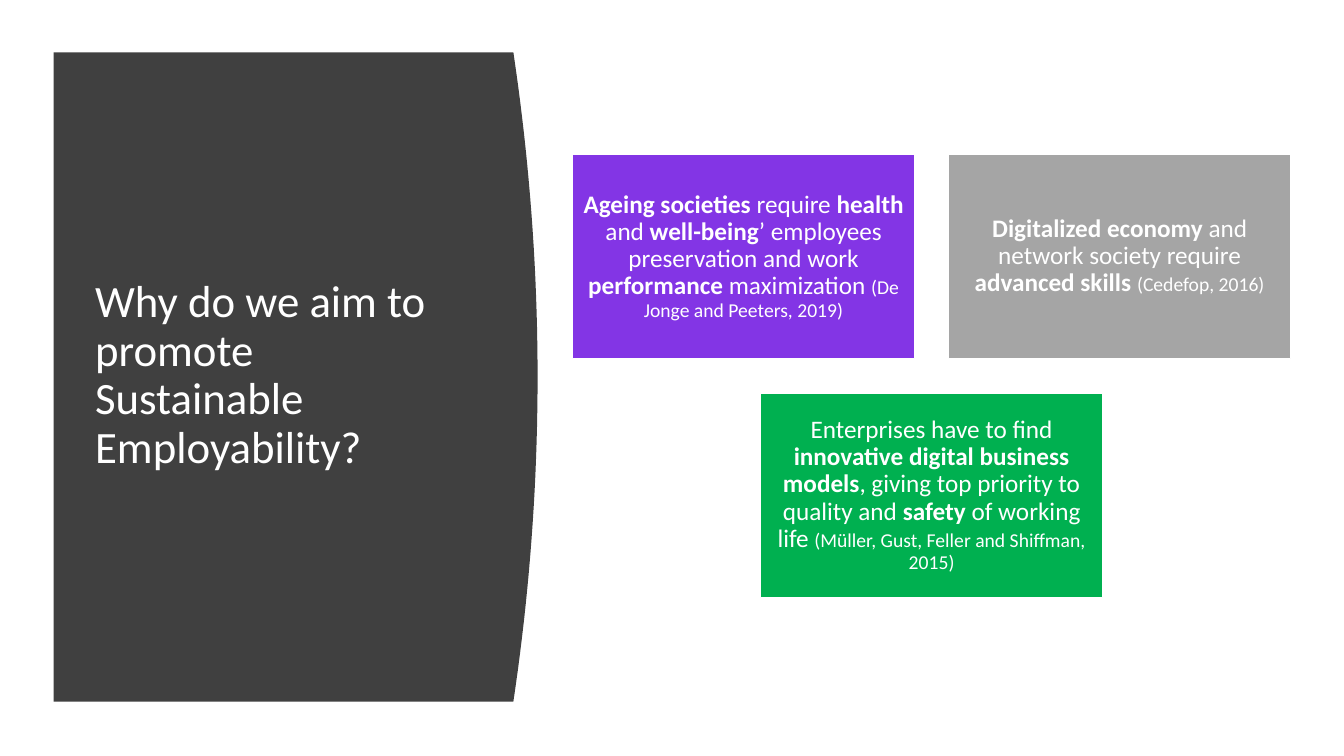
from pptx import Presentation
from pptx.dml.color import RGBColor
from pptx.enum.shapes import MSO_SHAPE as Shape
from pptx.enum.text import MSO_ANCHOR as Anchor, PP_ALIGN as Align
from pptx.util import Inches, Pt

WIDE, HIGH = 13.33, 7.5
WHITE, DARK = "FFFFFF", "404040"
TITLE = "Why do we aim to promote Sustainable Employability?"

# Each card: fill, text with bold parts between asterisks, citation
CARDS = [
    ("8335E5", "*Ageing societies *require *health* and *well-being*’ employees "
     "preservation and work *performance *maximization ",
     "(De Jonge and Peeters, 2019)"),
    ("A5A5A5", "*Digitalized economy *and network society require *advanced skills *",
     "(Cedefop, 2016)"),
    ("00B050", "Enterprises have to find *innovative digital business models*, giving "
     "top priority to quality and *safety* of working life ",
     "(Müller, Gust, Feller and Shiffman, 2015)"),
]


def color(hue):
    return RGBColor.from_string(hue)


def paint(shape, hue):
    shape.shadow.inherit = False
    shape.fill.solid()
    shape.fill.fore_color.rgb = color(hue)


def write(shape, runs, inset, align):
    """Fill a shape with runs of (text, size, bold)."""
    frame = shape.text_frame
    form = {"word_wrap": True, "vertical_anchor": Anchor.MIDDLE}
    form.update({f"margin_{side}": Inches(inset)
                 for side in ("left", "top", "right", "bottom")})
    for key, value in form.items():
        setattr(frame, key, value)
    para = frame.paragraphs[0]
    para.alignment, para.line_spacing = align, 0.9
    for text, size, bold in runs:
        run = para.add_run()
        run.text = text
        for key, value in {"name": "Calibri", "size": Pt(size), "bold": bold}.items():
            setattr(run.font, key, value)
        run.font.color.rgb = color(WHITE)


def panel(slide, left, top, width, height):
    """Dark title panel whose right edge bulges as a parabola."""
    bulge, steps = 0.05 * width, 40
    edge = []
    for step in range(steps + 1):
        part = step / steps
        curve = 1 - (2 * part - 1) ** 2
        edge.append((Inches(left + width - bulge + bulge * curve),
                     Inches(top + height * part)))
    form = slide.shapes.build_freeform(Inches(left), Inches(top), scale=1.0)
    form.add_line_segments(edge + [(Inches(left), Inches(top + height))], close=True)
    back = form.convert_to_shape()
    paint(back, DARK)
    back.line.fill.background()

    # Title
    box = slide.shapes.add_textbox(
        Inches(left + 0.41), Inches(top + 0.59), Inches(0.78 * width), Inches(height - 1.2))
    write(box, [(TITLE, 32, False)], 0, Align.LEFT)


def cards(slide, left, top, width, height):
    """Cards in two columns, with a short last row centred."""
    cols, gap = 2, 0.34
    rows = -(-len(CARDS) // cols)
    wide = (width - gap * (cols - 1)) / cols
    high = (height - gap * (rows - 1)) / rows
    for i, (hue, text, cite) in enumerate(CARDS):
        row, col = divmod(i, cols)
        count = min(cols, len(CARDS) - row * cols)
        shift = (cols - count) * (wide + gap) / 2
        card = slide.shapes.add_shape(
            Shape.RECTANGLE, Inches(left + shift + col * (wide + gap)),
            Inches(top + row * (high + gap)), Inches(wide), Inches(high))
        paint(card, hue)
        card.line.color.rgb = color(WHITE)
        card.line.width = Pt(1)
        runs = [(part, 18, n % 2 == 1) for n, part in enumerate(text.split("*")) if part]
        write(card, runs + [(cite, 14, False)], 0.07, Align.CENTER)


def main():
    deck = Presentation()
    deck.slide_width, deck.slide_height = Inches(WIDE), Inches(HIGH)
    slide = deck.slides.add_slide(deck.slide_layouts[6])
    panel(slide, 0.04 * WIDE, 0.52, 0.36 * WIDE, HIGH - 1.06)
    cards(slide, 5.68, 1.53, 7.12, 4.4)
    deck.save("out.pptx")


if __name__ == "__main__":
    main()
